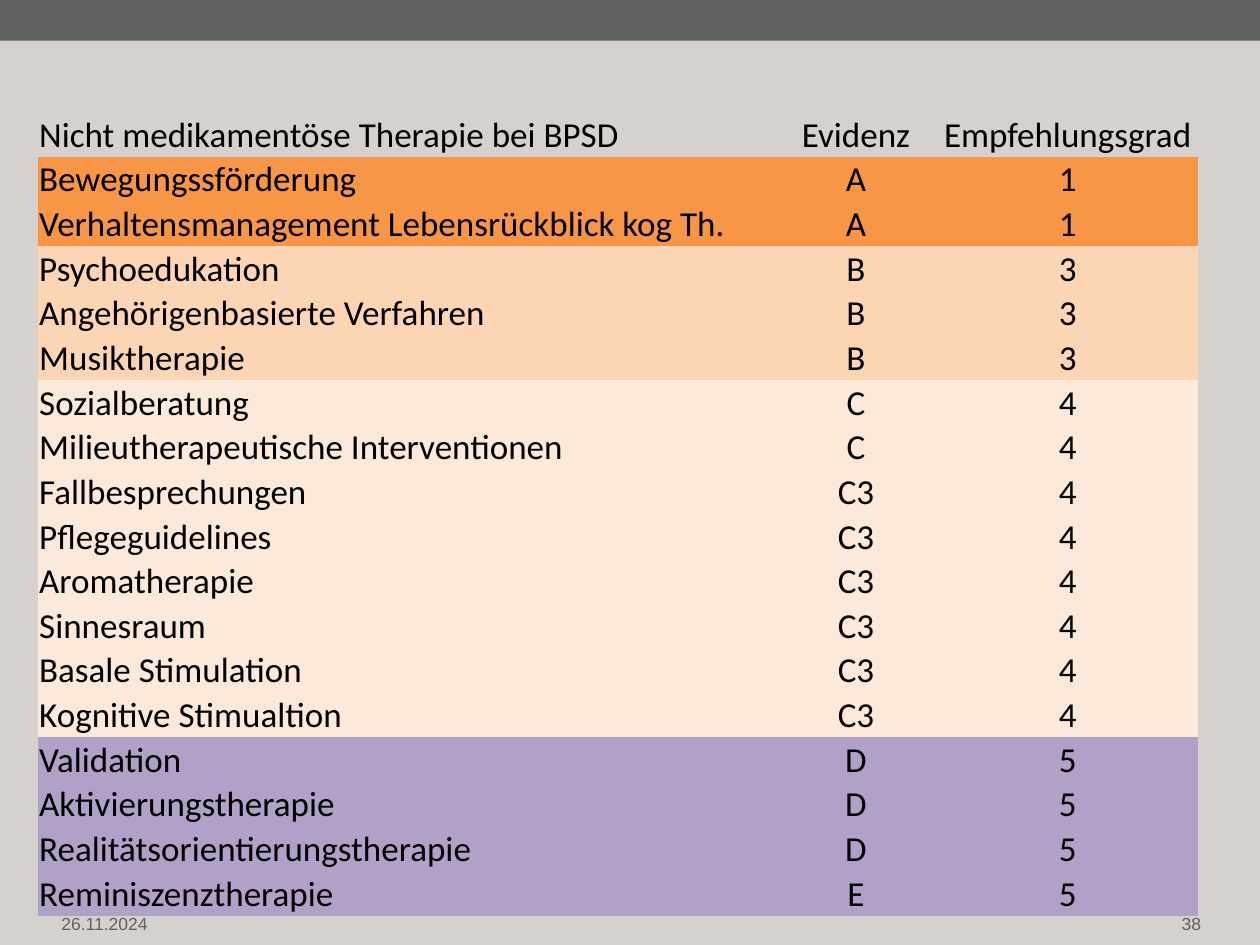
from pptx import Presentation
from pptx.dml.color import RGBColor
from pptx.enum import shapes, text
from pptx.oxml import ns
from pptx.util import Cm, Pt

COLORS = {
    "background": "D6D1CD",
    "bar": "5F625F",
    "footer": "5F625F",
    "text": "000000",
}
GRADE_FILLS = {"1": "F79646", "3": "FCD5B4", "4": "FDE9D9", "5": "B1A0C7"}
NO_GRID_STYLE = "{2D5ABB26-0587-4C30-8999-92F81FD0307C}"
LEFT, CENTER, RIGHT = (
    text.PP_ALIGN.LEFT, text.PP_ALIGN.CENTER, text.PP_ALIGN.RIGHT)

HEADER = ("Nicht medikamentöse Therapie bei BPSD", "Evidenz", "Empfehlungsgrad")
THERAPIES = [
    ("Bewegungssförderung", "A", "1"),
    ("Verhaltensmanagement Lebensrückblick kog Th.", "A", "1"),
    ("Psychoedukation", "B", "3"),
    ("Angehörigenbasierte Verfahren", "B", "3"),
    ("Musiktherapie", "B", "3"),
    ("Sozialberatung", "C", "4"),
    ("Milieutherapeutische Interventionen", "C", "4"),
    ("Fallbesprechungen", "C3", "4"),
    ("Pflegeguidelines", "C3", "4"),
    ("Aromatherapie", "C3", "4"),
    ("Sinnesraum", "C3", "4"),
    ("Basale Stimulation", "C3", "4"),
    ("Kognitive Stimualtion", "C3", "4"),
    ("Validation", "D", "5"),
    ("Aktivierungstherapie", "D", "5"),
    ("Realitätsorientierungstherapie", "D", "5"),
    ("Reminiszenztherapie", "E", "5"),
]


def paint(fill, color):
    fill.solid()
    fill.fore_color.rgb = RGBColor.from_string(color)


def write(frame, words, *, font, size, color, align=LEFT):
    para = frame.paragraphs[0]
    para.alignment = align
    span = para.add_run()
    span.text = words
    span.font.name = font
    span.font.size = Pt(size)
    span.font.color.rgb = RGBColor.from_string(color)


def add_bar(page, width):
    bar = page.shapes.add_shape(
        shapes.MSO_SHAPE.RECTANGLE, 0, 0, width, Cm(0.82))
    bar.shadow.inherit = False
    paint(bar.fill, COLORS["bar"])
    bar.line.fill.background()


def add_footer(page, words, left, align):
    box = page.shapes.add_textbox(Cm(left), Cm(18.31), Cm(5.72), Cm(0.61))
    frame = box.text_frame
    frame.word_wrap = True
    frame.vertical_anchor = text.MSO_ANCHOR.MIDDLE
    frame.margin_left = frame.margin_right = 0
    frame.margin_top = frame.margin_bottom = 0
    write(frame, words, font="Arial", size=10, color=COLORS["footer"],
          align=align)


def fill_cell(cell, words, align, color):
    cell.margin_left = cell.margin_right = cell.margin_top = Cm(0.02)
    cell.margin_bottom = 0
    cell.vertical_anchor = text.MSO_ANCHOR.BOTTOM
    if color:
        paint(cell.fill, color)
    else:
        cell.fill.background()
    write(cell.text_frame, words, font="Calibri", size=20,
          color=COLORS["text"], align=align)


def add_therapy_table(page):
    records = [HEADER, *THERAPIES]
    widths = [14.85, 3.27, 5.27]
    heights = [2.28] + [0.9] * len(THERAPIES)
    holder = page.shapes.add_table(
        len(records), len(widths), Cm(0.77), Cm(0.88),
        Cm(sum(widths)), Cm(sum(heights)))
    table = holder.table
    table.first_row = table.horz_banding = False
    style = next(holder._element.iter(ns.qn("a:tableStyleId")))
    style.text = NO_GRID_STYLE
    for column, width in zip(table.columns, widths):
        column.width = Cm(width)
    for row, height, record in zip(table.rows, heights, records):
        row.height = Cm(height)
        color = GRADE_FILLS.get(record[-1])
        for cell, words, align in zip(row.cells, record, (LEFT, CENTER, CENTER)):
            fill_cell(cell, words, align, color)


def main():
    deck = Presentation()
    deck.slide_width, deck.slide_height = Cm(25.4), Cm(19.05)
    page = deck.slides.add_slide(deck.slide_layouts.get_by_name("Blank"))
    paint(page.background.fill, COLORS["background"])
    add_bar(page, deck.slide_width)
    add_footer(page, "26.11.2024", 1.24, LEFT)
    add_footer(page, "38", 18.49, RIGHT)
    add_therapy_table(page)
    deck.save("out.pptx")


if __name__ == "__main__":
    main()
